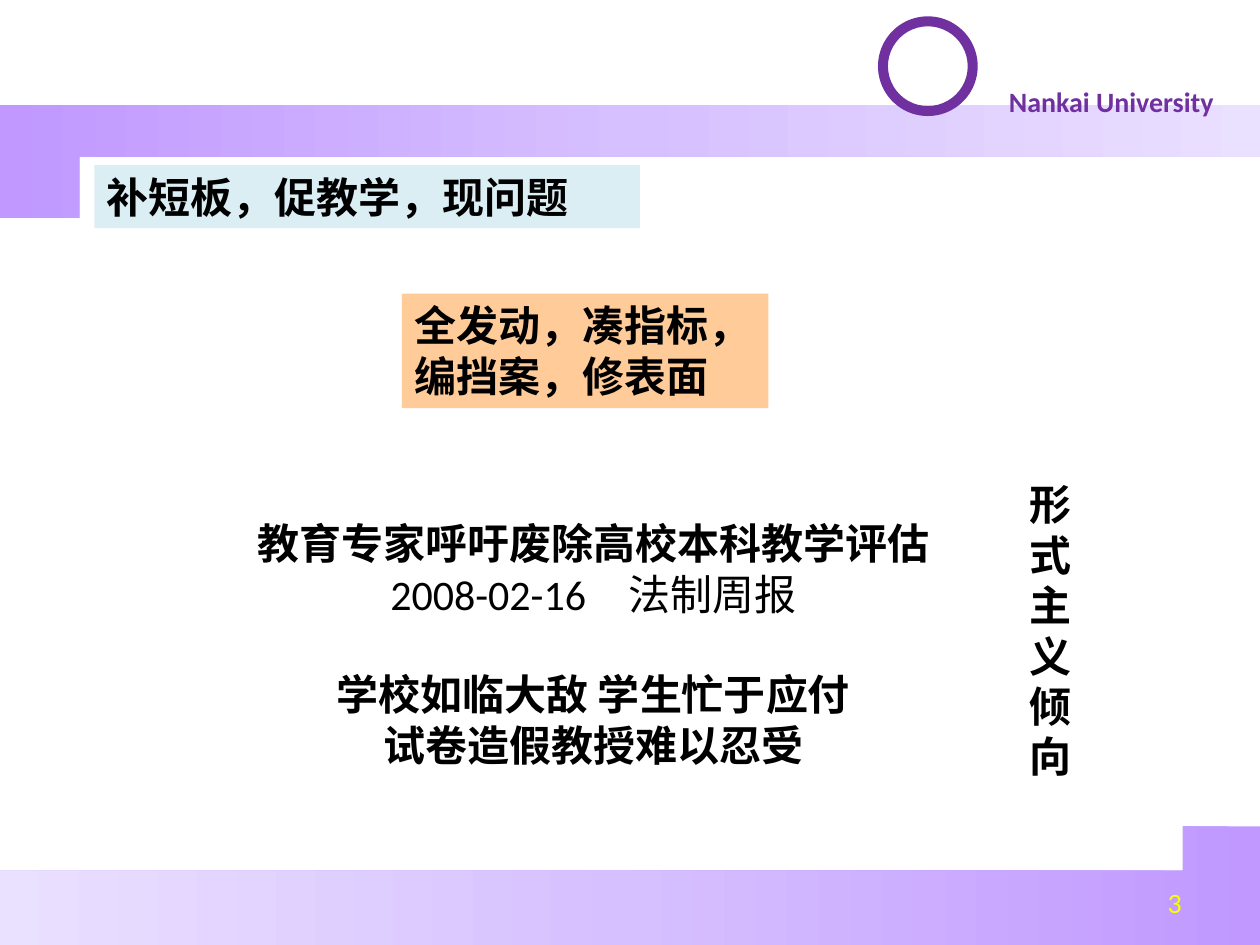
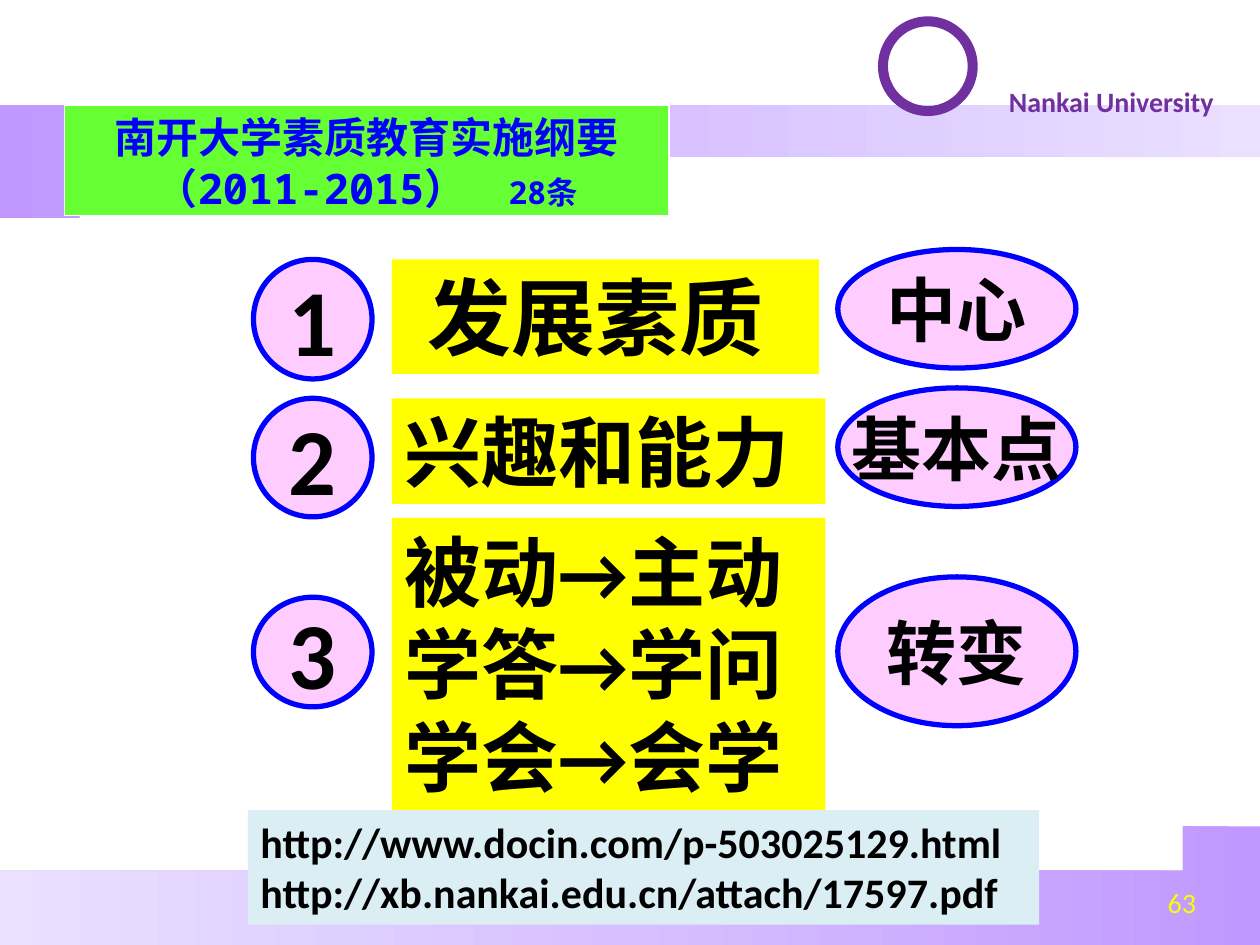
from copy import deepcopy

from lxml.etree import SubElement
from pptx import Presentation
from pptx.dml.color import RGBColor
from pptx.enum.shapes import MSO_SHAPE
from pptx.enum.text import MSO_ANCHOR, MSO_AUTO_SIZE, PP_ALIGN
from pptx.oxml.ns import qn
from pptx.util import Cm, Pt

WIDTH, HEIGHT = 25.4, 19.05
FONT, MONO, ARROW_FONT = "Calibri", "Noto Sans Mono", "Noto Sans CJK SC"
BLACK, WHITE, BLUE, PURPLE = "000000", "FFFFFF", "0000FF", "7030A0"
YELLOW, PINK, ICE = "FFFF00", "FFCCFF", "DBEEF4"
PAGE_COLOR = "F9FF01"
LINE_HEIGHT = 1.2

# Shared parts: top, thickness, rotation and corner adjustments of each band
BANDS = [
    (2.11, 2.29, 90, (0.698, 0.457)),
    (16.66, 2.39, 270, (0.649, 0.628)),
]
BAND_STOPS = [(0, "C098FF"), (0.5, "D6C0FF"), (1, "EAE0FF")]
UNIVERSITY = "Nankai University"

# Text is a list of paragraphs, each a list of runs: (text, overrides)
PROBLEMS = {
    "page": "3",
    "title": [[("补短板，促教学，现问题", {})]],
    "article": [
        [("教育专家呼吁废除高校本科教学评估", {})],
        [("2008-02-16　法制周报", {"bold": False})],
        [("学校如临大敌 学生忙于应付", {})],
        [("试卷造假教授难以忍受", {})],
    ],
    "symptoms": [[("全发动，凑指标，编挡案，修表面", {})]],
    "tendency": [[("形式主义倾向", {})]],
}

OUTLINE = {
    "page": "63",
    "title": [
        [("南开大学素质教育实施纲要", {})],
        [("（2011-2015）　", {}), ("28条", {"size": 18})],
    ],
    "goal": [[("发展素质 ", {})]],
    "basis": [[("兴趣和能力", {})]],
    "changes": [("被动", "主动"), ("学答", "学问"), ("学会", "会学")],
    # number, its top and height, role, its top and height
    "rows": [
        ("1", 5.23, 2.41, "中心", 5.03, 2.39),
        ("2", 8.03, 2.39, "基本点", 7.82, 2.39),
        ("3", 12.04, 2.21, "转变", 11.63, 3.0),
    ],
    "links": [
        [("http://www.docin.com/p-503025129.html", {})],
        [("http://xb.nankai.edu.cn/attach/17597.pdf", {})],
    ],
}


def rgb(color):
    return RGBColor.from_string(color)


def set_run(run, size, color, bold=True, font=FONT):
    run.font.size, run.font.bold, run.font.name = Pt(size), bold, font
    run.font.color.rgb = rgb(color)
    # East Asian text follows the line metrics of the main font
    latin = run.font._element.find(qn("a:latin"))
    east_asian = SubElement(run.font._element, qn("a:ea"))
    east_asian.set("typeface", FONT)
    latin.addnext(east_asian)


def write(shape, paragraphs, size=24, color=BLACK, align=PP_ALIGN.LEFT,
          anchor=MSO_ANCHOR.TOP, wrap=True, bold=True, font=FONT):
    frame = shape.text_frame
    frame.word_wrap, frame.vertical_anchor = wrap, anchor
    frame.auto_size = MSO_AUTO_SIZE.NONE
    for index, runs in enumerate(paragraphs):
        paragraph = frame.add_paragraph() if index else frame.paragraphs[0]
        if shape.is_placeholder:
            properties = paragraph._p.get_or_add_pPr()
            properties.set("marL", "0")
            properties.set("indent", "0")
            SubElement(properties, qn("a:buNone"))
        paragraph.alignment = align
        paragraph.line_spacing = Pt(size * LINE_HEIGHT)
        paragraph.space_before = paragraph.space_after = Pt(0)
        for text, overrides in runs:
            run = paragraph.add_run()
            run.text = text
            style = {"size": size, "color": color, "bold": bold, "font": font}
            set_run(run, **(style | overrides))


def place(shape, left, top, width, height):
    shape.left, shape.top = Cm(left), Cm(top)
    shape.width, shape.height = Cm(width), Cm(height)


def paint(shape, fill, line=None, weight=0.75):
    shape.fill.solid()
    shape.fill.fore_color.rgb = rgb(fill)
    if line:
        shape.line.color.rgb = rgb(line)
        shape.line.width = Pt(weight)
    else:
        shape.line.fill.background()


def add_shape(slide, kind, box):
    shape = slide.shapes.add_shape(kind, *map(Cm, box))
    shape.shadow.inherit = False
    return shape


def add_panel(slide, box, paragraphs, fill, **style):
    panel = add_shape(slide, MSO_SHAPE.RECTANGLE, box)
    paint(panel, fill)
    write(panel, paragraphs, **style)


def add_oval(slide, box, label, size):
    oval = add_shape(slide, MSO_SHAPE.OVAL, box)
    paint(oval, PINK, BLUE, 3)
    write(oval, [[(label, {})]], size=size, align=PP_ALIGN.CENTER,
          anchor=MSO_ANCHOR.MIDDLE, wrap=False)


def add_label(slide, box, paragraphs, **style):
    write(slide.shapes.add_textbox(*map(Cm, box)), paragraphs, **style)


def add_band(slide, top, thickness, rotation, corners):
    """Draw a full-width band as a turned L shape behind everything else."""
    box = ((WIDTH - thickness) / 2, top + (thickness - WIDTH) / 2, thickness, WIDTH)
    band = add_shape(slide, MSO_SHAPE.CORNER, box)
    band.rotation = rotation
    for index, corner in enumerate(corners):
        band.adjustments[index] = corner
    band.line.fill.background()
    band.fill.gradient()
    band.fill.gradient_angle = 90
    first_stop = band._element.find(".//" + qn("a:gs"))
    first_stop.addnext(deepcopy(first_stop))
    for stop, (position, color) in zip(band.fill.gradient_stops, BAND_STOPS):
        stop.position = position
        stop.color.rgb = rgb(color)
    slide.shapes._spTree.insert(2, band._element)


def start_slide(deck, page):
    slide = deck.slides.add_slide(deck.slide_layouts[1])
    for band in BANDS:
        add_band(slide, *band)
    emblem = add_shape(slide, MSO_SHAPE.DONUT, (17.7, 0.33, 2.01, 2.01))
    emblem.adjustments[0] = 0.1
    paint(emblem, PURPLE)
    add_label(slide, (20.09, 1.57, 5.31, 0.94), [[(UNIVERSITY, {})]],
              size=16, color=PURPLE)
    add_label(slide, (23.29, 17.73, 1.6, 0.94), [[(page, {})]],
              size=16, color=PAGE_COLOR, bold=False)
    return slide


def build_problems(deck):
    slide = start_slide(deck, PROBLEMS["page"])
    title, article = slide.placeholders
    place(title, 1.9, 3.33, 11, 1.27)
    paint(title, ICE)
    write(title, PROBLEMS["title"])
    place(article, 4.9, 10.31, 14.12, 5.38)
    write(article, PROBLEMS["article"], align=PP_ALIGN.CENTER)
    article.text_frame.paragraphs[2].space_before = Pt(24 * LINE_HEIGHT)
    add_label(slide, (20.5, 9.53, 1.4, 6.4), PROBLEMS["tendency"])
    add_panel(slide, (8.1, 5.92, 7.39, 2.31), PROBLEMS["symptoms"], "FFCC99")


def build_outline(deck):
    slide = start_slide(deck, OUTLINE["page"])
    title, changes = slide.placeholders
    place(title, 1.3, 2.13, 12.19, 2.21)
    paint(title, "66FF33", WHITE)
    write(title, OUTLINE["title"], color=BLUE, align=PP_ALIGN.CENTER, font=MONO)
    place(changes, 7.9, 10.44, 8.74, 5.89)
    paint(changes, YELLOW)
    write(changes, [[(before, {}), ("→", {"font": ARROW_FONT}), (after, {})]
                    for before, after in OUTLINE["changes"]], size=44)
    add_panel(slide, (7.9, 5.23, 8.61, 2.31), OUTLINE["goal"], YELLOW,
              size=48, align=PP_ALIGN.CENTER)
    add_panel(slide, (7.9, 8.03, 8.74, 2.13), OUTLINE["basis"], YELLOW, size=44)
    for number, number_top, number_height, role, role_top, role_height in OUTLINE["rows"]:
        add_oval(slide, (5.11, number_top, 2.39, number_height), number, 54)
        add_oval(slide, (16.89, role_top, 4.8, role_height), role, 40)
    add_panel(slide, (5, 16.33, 15.95, 2.31), OUTLINE["links"], ICE)


def main():
    deck = Presentation()
    deck.slide_width, deck.slide_height = Cm(WIDTH), Cm(HEIGHT)
    build_problems(deck)
    build_outline(deck)
    deck.save("out.pptx")


if __name__ == "__main__":
    main()
